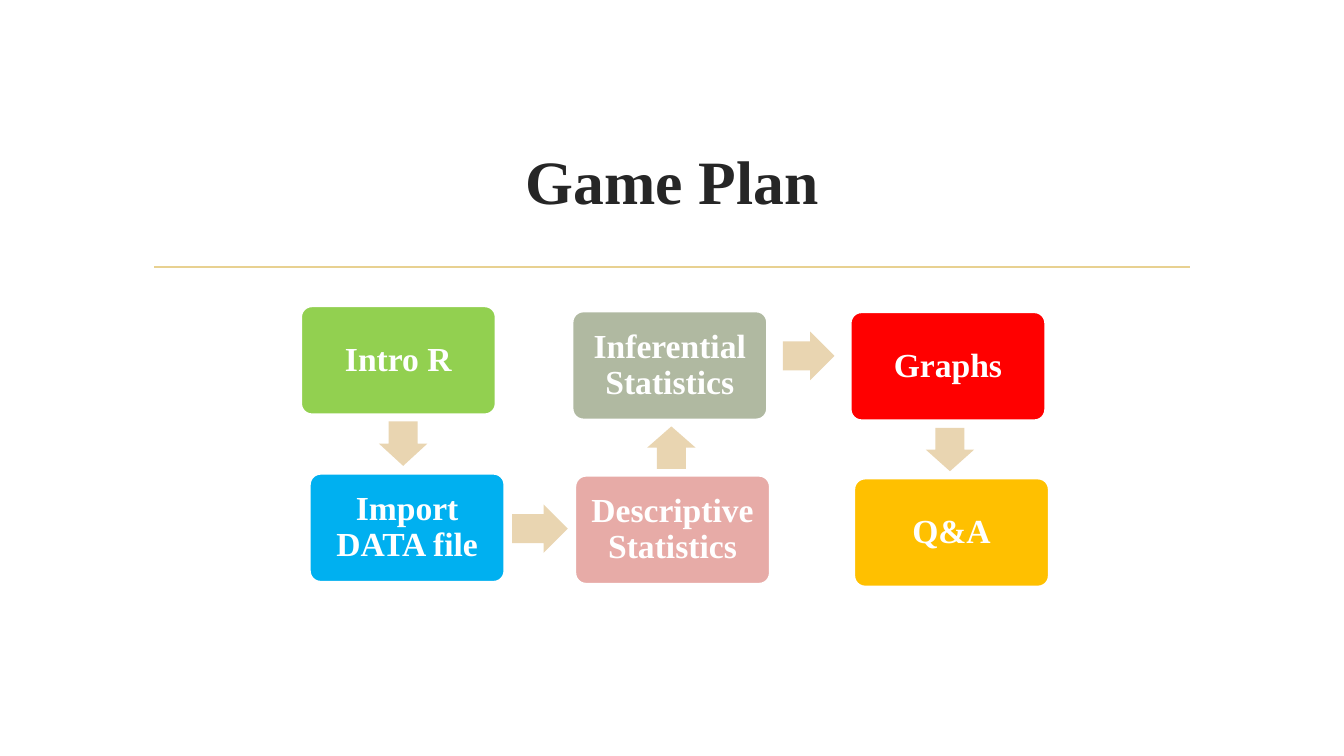
from pptx import Presentation
from pptx import util as u
from pptx.dml.color import RGBColor
from pptx.enum import shapes, text
from pptx.oxml import parse_xml
from pptx.oxml.ns import nsdecls

TITLE = "Game Plan"
FONT = "Times New Roman"
WHITE, INK, GOLD, SAND = "FFFFFF", "262626", "E8D191", "E9D5B1"

# Steps: wording, fill, left and top in cm
STEPS = [
    ("Intro R", "92D050", 7.59, 7.72),
    ("Import DATA file", "00B0F0", 7.81, 11.94),
    ("Descriptive Statistics", "E7ABA7", 14.50, 11.99),
    ("Inferential Statistics", "B0B9A1", 14.43, 7.85),
    ("Graphs", "FF0000", 21.44, 7.87),
    ("Q&A", "FFC000", 21.53, 12.06),
]
STEP_WIDTH, STEP_HEIGHT = 4.90, 2.72

# Arrows: centre x, centre y and length in cm, rotation in degrees
ARROWS = [
    (10.16, 11.18, 1.12, 90),
    (13.61, 13.32, 1.40, 0),
    (16.92, 11.28, 1.07, 270),
    (20.38, 8.97, 1.30, 0),
    (23.94, 11.33, 1.09, 90),
]
ARROW_WIDTH = 1.22


def color(value):
    return RGBColor.from_string(value)


def write(shape, words, size, ink, spacing):
    frame = shape.text_frame
    frame.word_wrap = True
    frame.auto_size = text.MSO_AUTO_SIZE.NONE
    frame.vertical_anchor = text.MSO_ANCHOR.MIDDLE
    para = frame.paragraphs[0]
    para.alignment = text.PP_ALIGN.CENTER
    para.line_spacing = spacing
    span = para.add_run()
    span.text = words
    span.font.name = FONT
    span.font.size = u.Pt(size)
    span.font.bold = True
    span.font.color.rgb = color(ink)
    return frame


def add_block(page, kind, left, top, width, height, fill):
    block = page.shapes.add_shape(kind, *map(u.Cm, (left, top, width, height)))
    block.shadow.inherit = False
    block.fill.solid()
    block.fill.fore_color.rgb = color(fill)
    return block


def main():
    deck = Presentation()
    deck.slide_width, deck.slide_height = u.Cm(33.87), u.Cm(19.05)
    page = deck.slides.add_slide(deck.slide_layouts[5])

    # Title and the rule below it
    title = page.shapes.title
    title.left, title.top = u.Cm(3.61), u.Cm(2.72)
    title.width, title.height = u.Cm(26.67), u.Cm(3.63)
    write(title, TITLE, 44, INK, 1.0)
    rule = page.shapes.add_connector(
        shapes.MSO_CONNECTOR.STRAIGHT, u.Cm(3.89), u.Cm(6.73), u.Cm(30), u.Cm(6.73))
    rule.line.color.rgb = color(GOLD)
    rule.line.width = u.Pt(1.25)
    rule._element.spPr.append(parse_xml(f"<a:effectLst {nsdecls('a')}/>"))

    # Step boxes
    for words, fill, left, top in STEPS:
        box = add_block(page, shapes.MSO_SHAPE.ROUNDED_RECTANGLE,
                        left, top, STEP_WIDTH, STEP_HEIGHT, fill)
        box.adjustments[0] = 0.1
        box.line.color.rgb = color(WHITE)
        box.line.width = u.Pt(1.25)
        frame = write(box, words, 24, WHITE, 0.9)
        frame.margin_left = frame.margin_right = u.Cm(0.3)
        frame.margin_top = frame.margin_bottom = u.Cm(0.3)

    # Arrows from step to step
    for x, y, length, rotation in ARROWS:
        arrow = add_block(page, shapes.MSO_SHAPE.RIGHT_ARROW,
                          x - length / 2, y - ARROW_WIDTH / 2, length, ARROW_WIDTH, SAND)
        arrow.adjustments[0] = 0.6
        arrow.adjustments[1] = 0.5
        arrow.rotation = rotation
        arrow.line.fill.background()

    deck.save("out.pptx")


if __name__ == "__main__":
    main()
